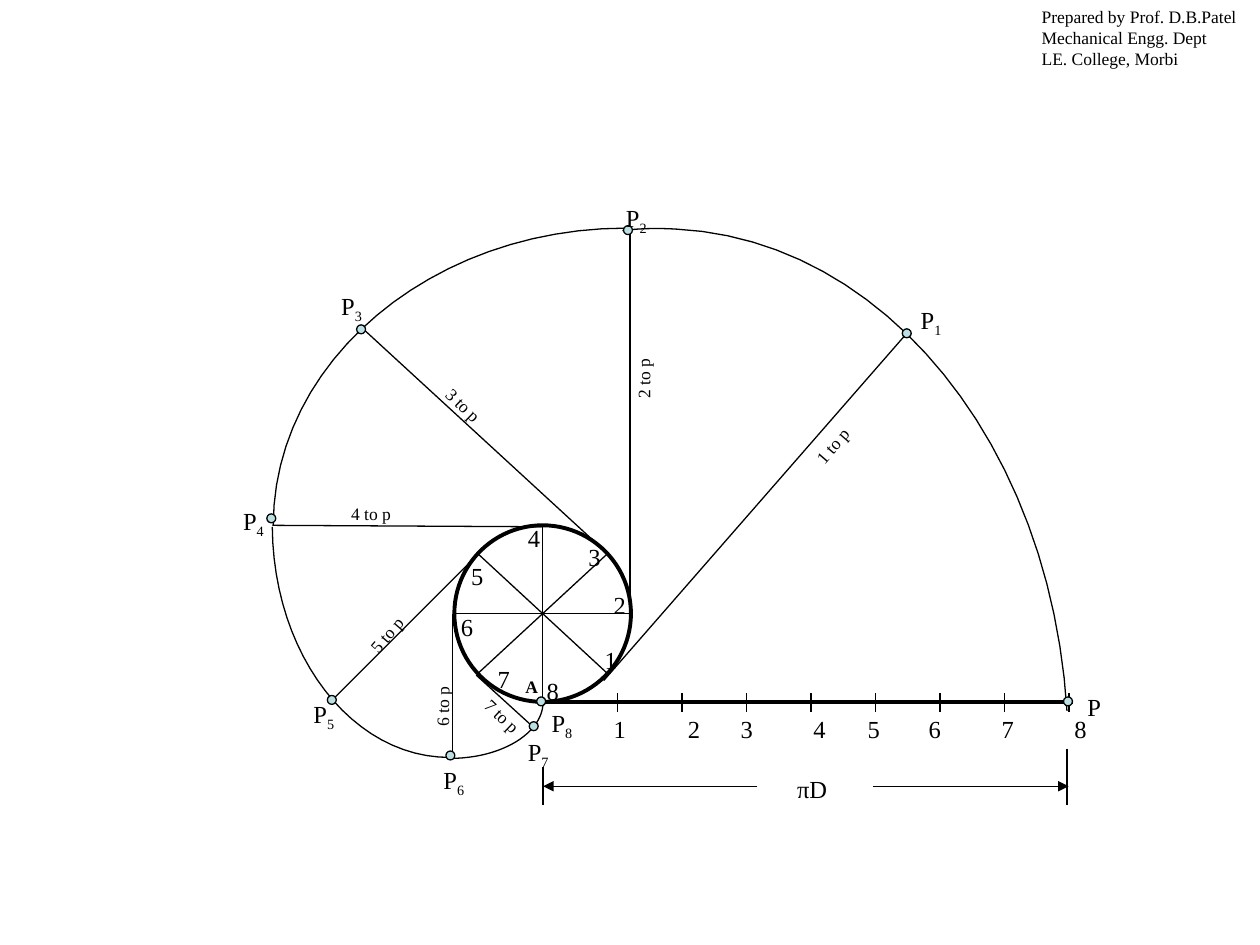
from dataclasses import dataclass

from lxml import etree
from pptx import Presentation
from pptx.dml.color import RGBColor
from pptx.enum.shapes import MSO_CONNECTOR as Connector, MSO_SHAPE as Preset
from pptx.oxml.ns import qn
from pptx.util import Cm, Pt


@dataclass(frozen=True)
class Theme:
    font: str = "Times New Roman"
    ink: RGBColor = RGBColor(0, 0, 0)
    paper: RGBColor = RGBColor(255, 255, 255)
    dot: RGBColor = RGBColor(0xBB, 0xE0, 0xE3)
    label: Pt = Pt(14)
    small: Pt = Pt(10)
    thin: Pt = Pt(0.75)
    thick: Pt = Pt(2.25)


theme = Theme()
presentation = Presentation()
presentation.slide_width, presentation.slide_height = Cm(25.4), Cm(19.05)
slide = presentation.slides.add_slide(presentation.slide_layouts[6])


def add_text(left, top, width, height, lines, size, bold=False, wrap=False, rotation=0):
    """Each line is a list of runs; every run after the first is a subscript."""
    box = slide.shapes.add_textbox(Cm(left), Cm(top), Cm(width), Cm(height))
    box.rotation = rotation
    frame = box.text_frame
    frame.word_wrap = wrap
    for number, runs in enumerate(lines):
        paragraph = frame.add_paragraph() if number else frame.paragraphs[0]
        for position, text in enumerate(runs):
            run = paragraph.add_run()
            run.text = text
            run.font.name, run.font.size, run.font.bold = theme.font, size, bold
            run.font.color.rgb = theme.ink
            if position:
                run._r.get_or_add_rPr().set("baseline", "-25000")


def set_style(shape, width, fill=None):
    shape.shadow.inherit = False
    shape.line.color.rgb = theme.ink
    shape.line.width = width
    if fill is None:
        shape.fill.background()
    else:
        shape.fill.solid()
        shape.fill.fore_color.rgb = fill


# Base circle
center_x, center_y, radius = 10.94, 12.37, 1.78
circle = slide.shapes.add_shape(Preset.OVAL, Cm(center_x - radius), Cm(center_y - radius),
                                Cm(2 * radius), Cm(2 * radius))
set_style(circle, theme.thick, theme.paper)

# Straight lines: spokes, unrolled circumference, ticks, tangents, dimension
base_y, base_start, base_end = 14.15, 10.95, 21.54
spokes = [(center_x - dx, center_y - dy, center_x + dx, center_y + dy)
          for dx, dy in [(0, radius), (radius, 0), (1.32, 1.22), (1.32, -1.22)]]
ticks = [(12.45 + 1.3 * i, 13.97, 12.45 + 1.3 * i, 14.35) for i in range(8)]
tangents = [
    (12.17, 13.72, 18.34, 6.65),
    (12.7, 12.47, 12.7, 4.6),
    (12.29, 11.2, 7.32, 6.63),
    (10.92, 10.62, 5.49, 10.59),
    (9.68, 11.13, 6.76, 14.05),
    (9.12, 12.37, 9.12, 15.19),
    (9.6, 13.61, 10.72, 14.63),
]
extensions = [(base_start, 15.47, base_start, 16.23), (21.51, 15.09, 21.51, 16.23)]
arrows = [(15.27, 15.85, base_start, 15.85), (17.6, 15.85, base_end, 15.85)]
baseline = (base_start, base_y, 21.64, base_y)

for ends in spokes + [baseline] + ticks + tangents + extensions + arrows:
    line = slide.shapes.add_connector(Connector.STRAIGHT, *map(Cm, ends))
    line.line.color.rgb = theme.ink
    line.line.width = theme.thick if ends == baseline else theme.thin
    if ends in arrows:
        etree.SubElement(line.line._get_or_add_ln(), qn("a:tailEnd"), type="triangle")
    etree.SubElement(line._element.spPr, qn("a:effectLst"))

# Involute arcs: a start point, then three control points for each cubic segment
arcs = [
    [(21.51, 14.33), (21.18, 8.97), (17.83, 4.83), (13.64, 4.62),
     (13.28, 4.6), (12.93, 4.6), (12.55, 4.65)],
    [(12.62, 4.6), (8.71, 4.6), (5.51, 7.29), (5.51, 10.59)],
    [(9.09, 15.27), (7.11, 15.29), (5.51, 13.21), (5.49, 10.62)],
    [(9.07, 15.29), (10.11, 15.29), (10.95, 14.78), (10.95, 14.15)],
]
steps = 24
for arc in arcs:
    points = []
    for first in range(0, len(arc) - 1, 3):
        controls = arc[first:first + 4]
        for step in range(1, steps + 1):
            t = step / steps
            weights = [(1 - t) ** 3, 3 * t * (1 - t) ** 2, 3 * t * t * (1 - t), t ** 3]
            points.append([Cm(sum(w * c[axis] for w, c in zip(weights, controls)))
                           for axis in (0, 1)])
    builder = slide.shapes.build_freeform(Cm(arc[0][0]), Cm(arc[0][1]))
    builder.add_line_segments(points, close=False)
    set_style(builder.convert_to_shape(), theme.thin)

# Curve points: subscript, dot centre, label corner
curve_points = [
    ("", 21.53, 14.14, 21.67, 13.82),
    ("1", 18.28, 6.72, 18.31, 6.02),
    ("2", 12.66, 4.64, 12.37, 3.96),
    ("3", 7.28, 6.64, 6.63, 5.74),
    ("4", 5.47, 10.45, 4.65, 10.08),
    ("5", 6.69, 14.11, 6.07, 13.97),
    ("6", 9.08, 15.23, 8.69, 15.29),
    ("7", 10.76, 14.64, 10.39, 14.73),
    ("8", 10.91, 14.14, 10.87, 14.15),
]
dot_size = 0.18
for subscript, x, y, left, top in curve_points:
    dot = slide.shapes.add_shape(Preset.OVAL, Cm(x - dot_size / 2), Cm(y - dot_size / 2),
                                 Cm(dot_size), Cm(dot_size))
    set_style(dot, theme.thin, theme.dot)
    runs = ["P", subscript] if subscript else ["P"]
    add_text(left, top, 0.94 if subscript else 0.79, 0.84, [runs], theme.label)

# Numbers on the circle and under the ticks
circle_numbers = [(11.94, 12.88), (12.12, 11.76), (11.61, 10.8), (10.39, 10.41),
                  (9.25, 11.18), (9.04, 12.22), (9.78, 13.26), (10.77, 13.51)]
tick_numbers = [(left, 14.27) for left in
                (12.12, 13.62, 14.68, 16.15, 17.24, 18.47, 19.94, 21.41)]
for corners in (circle_numbers, tick_numbers):
    for number, (left, top) in enumerate(corners, 1):
        add_text(left, top, 0.76, 0.84, [[str(number)]], theme.label)

# Tangent lengths: centre and rotation
lengths = [(16.79, 8.98, 310.9), (12.97, 7.62, 269.6), (9.35, 8.17, 44), (7.49, 10.35, 0),
           (7.8, 12.79, 310.9), (8.92, 14.24, 270.7), (10.13, 14.44, 43.5)]
for number, (x, y, rotation) in enumerate(lengths, 1):
    add_text(x - 0.66, y - 0.34, 1.32, 0.68, [[f"{number} to p"]], theme.small, rotation=rotation)

# Dimension text, start point and author
add_text(15.82, 15.47, 1.75, 0.86, [["πD"]], theme.label, wrap=True)
add_text(10.34, 13.51, 0.76, 0.69, [["A"]], theme.small, bold=True)
author = [["Prepared by Prof. D.B.Patel"], ["Mechanical Engg. Dept"], ["LE. College, Morbi"]]
add_text(20.75, 0, 4.65, 1.55, author, theme.small, wrap=True)

presentation.save("out.pptx")
